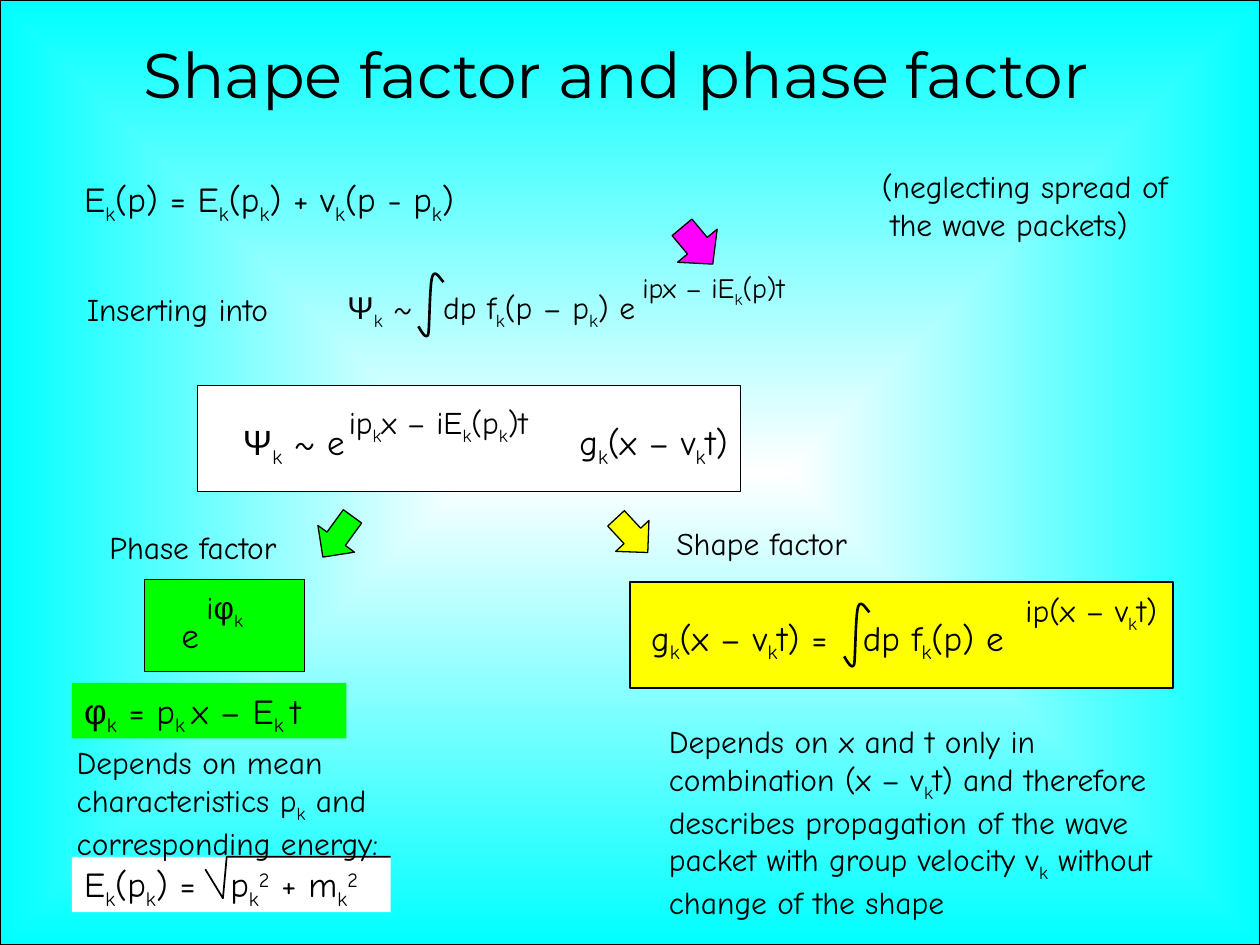
from itertools import groupby
from lxml import etree
from pptx import Presentation, util as u
from pptx.dml import color
from pptx.enum import shapes, text
from pptx.oxml import ns

deck = Presentation()
deck.slide_width, deck.slide_height = u.Inches(10), u.Inches(7.5)
column, row = deck.slide_width / 100, deck.slide_height / 75
page = deck.slides.add_slide(deck.slide_layouts[6])
RECT = shapes.MSO_SHAPE.RECTANGLE
RIGHT, DOWN = shapes.MSO_SHAPE.RIGHT_ARROW, shapes.MSO_SHAPE.DOWN_ARROW
BLACK, WHITE, CYAN = "000000", "FFFFFF", "00FFFF"
GREEN, YELLOW, MAGENTA = "00FF00", "FFFF00", "FF00FF"


def paint(fill, shade):
    fill.solid()
    fill.fore_color.rgb = color.RGBColor.from_string(shade)


def cell(left, top, width, height):
    return [round(left * column), round(top * row), round(width * column), round(height * row)]


backdrop = page.shapes.add_shape(RECT, *cell(0, 0, 100, 75))
backdrop.shadow.inherit = False
paint(backdrop.line.fill, BLACK)
backdrop.line.width = u.Pt(0.75)
backdrop.fill.gradient()
for stop, shade, position in zip(backdrop.fill.gradient_stops, (WHITE, CYAN), (0, 1)):
    stop.color.rgb = color.RGBColor.from_string(shade)
    stop.position = position
linear = backdrop._element.spPr.find(ns.qn("a:gradFill")).find(ns.qn("a:lin"))
radial = etree.Element(ns.qn("a:path"), {"path": "shape"})
etree.SubElement(radial, ns.qn("a:fillToRect"), {side: "50000" for side in "ltrb"})
linear.getparent().replace(linear, radial)

panels = [
    (RECT, (11.5, 46, 12.7, 7.3), GREEN, 0),
    (RECT, (50, 46.2, 43.1, 8.4), YELLOW, 0),
    (RECT, (15.7, 30.6, 43.1, 8.4), WHITE, 0),
    (RIGHT, (48.3, 40.7, 3.7, 3.6), YELLOW, 47.1),
    (DOWN, (25, 40.6, 3.6, 4), GREEN, 36.1),
    (DOWN, (53.3, 17.6, 4.1, 3.8), MAGENTA, 320.1),
]
for kind, area, shade, angle in panels:
    panel = page.shapes.add_shape(kind, *cell(*area))
    panel.shadow.inherit = False
    panel.rotation = angle
    paint(panel.fill, shade)
    paint(panel.line.fill, BLACK)
    panel.line.width = u.Pt(0.75)

# Pieces between bars alternate between the baseline and subscripts; ^ marks a superscript.
texts = [
    ((4.5, 2.3, 88.8, 10.6), 36, None, 0, ["Shape factor and phase factor"]),
    ((5.9, 22.5, 20.1, 4), 18, None, 0, ["Inserting into"]),
    ((18.3, 32.9, 43.1, 4.4), 20, None, 26.7, ["Ψ|k| ~ e\tg|k|(x – v|k|t)"]),
    ((5.7, 68, 25.3, 4.4), 20, WHITE, 11.6, ["E|k|(p|k|) =\tp|k||^2| + m|k||^2"]),
    ((5.1, 58.5, 31.3, 10.1), 18, None, 0,
     ["Depends on mean characteristics p|k| and corresponding energy:"]),
    ((5.7, 13.6, 34.1, 4.4), 20, None, 0, ["E|k|(p) = E|k|(p|k|) + v|k|(p - p|k|)"]),
    ((69, 12.8, 27.4, 7.1), 18, None, 0.7, ["(neglecting spread of", "\tthe wave packets)"]),
    ((26.6, 22.4, 27.3, 4), 18, None, 7.6, ["Ψ|k| ~\tdp f|k|(p – p|k|) e"]),
    ((50, 21, 14.9, 3.7), 16, None, 0, ["ipx – iE|k|(p)t"]),
    ((26.7, 31.5, 18.1, 4), 18, None, 0, ["ip|k|x – iE|k|(p|k|)t"]),
    ((50.7, 48.4, 35.5, 4.4), 20, None, 16.8, ["g|k|(x – v|k|t) =\tdp f|k|(p) e"]),
    ((80.4, 46.4, 14.1, 4), 18, None, 0, ["ip(x – v|k|t)"]),
    ((52.7, 41.1, 20, 4), 18, None, 0, ["Shape factor"]),
    ((7.7, 41.4, 18.1, 4), 18, None, 0, ["Phase factor"]),
    ((15.4, 46.2, 4.9, 4), 18, None, 0, ["iφ|k"]),
    ((13.4, 48.2, 4.8, 4.4), 20, None, 0, ["e"]),
    ((5.7, 54.2, 21.8, 4.4), 20, GREEN, 0, ["φ|k| = p|k |x – E|k |t"]),
    ((52.1, 56.8, 44.3, 16.2), 18, None, 0,
     ["Depends on x and t only in combination (x – v|k|t) and therefore",
      "describes propagation of the wave packet with group velocity v|k| without change of the shape"]),
]
for area, size, shade, tab, lines in texts:
    title = size == 36
    if shade:
        box = page.shapes.add_shape(RECT, *cell(*area))
        box.shadow.inherit = False
        box.line.fill.background()
        paint(box.fill, shade)
    else:
        box = page.shapes.add_textbox(*cell(*area))
    frame_format = {
        "word_wrap": not title,
        "vertical_anchor": text.MSO_ANCHOR.TOP,
        "auto_size": text.MSO_AUTO_SIZE.NONE if title else text.MSO_AUTO_SIZE.SHAPE_TO_FIT_TEXT,
    }
    for name, value in frame_format.items():
        setattr(box.text_frame, name, value)
    for number, line in enumerate(lines):
        para = box.text_frame.add_paragraph() if number else box.text_frame.paragraphs[0]
        para.alignment = text.PP_ALIGN.CENTER if title else text.PP_ALIGN.LEFT
        if "\t" in line:
            stops = etree.SubElement(para._p.get_or_add_pPr(), ns.qn("a:tabLst"))
            etree.SubElement(stops, ns.qn("a:tab"), {"pos": str(round(tab * column)), "algn": "l"})
        for index, piece in enumerate(line.split("|")):
            raised = piece.startswith("^")
            for greek, letters in groupby(piece.lstrip("^"), key=lambda letter: letter in "Ψφ"):
                span = para.add_run()
                span.text = "".join(letters)
                face = "Montserrat" if title else "Arial" if greek else "Comic Neue"
                for name, value in {"size": u.Pt(size), "name": face}.items():
                    setattr(span.font, name, value)
                paint(span.font.fill, BLACK)
                if raised or index % 2:
                    span._r.get_or_add_rPr().set("baseline", "30000" if raised else "-25000")

hook = [(2, 1), (1.6, 0.5), (1.3, 0), (1.1, 0.6), (0.9, 1.3), (0.9, 4.4), (0.8, 5.1),
        (0.6, 5.7), (0.1, 4.6), (0, 4.5)]
integral = hook[:1]
for first in range(0, 9, 3):
    for step in range(1, 13):
        t = step / 12
        weights = ((1 - t) ** 3, 3 * t * (1 - t) ** 2, 3 * t * t * (1 - t), t ** 3)
        integral.append([sum(w * point[axis] for w, point in zip(weights, hook[first:first + 4]))
                         for axis in (0, 1)])
root = [(0, 1), (1.4, 3.3), (1.7, 0), (14.7, 0)]

for left, top, outline, width in [(67, 47.6, integral, 1.5), (33.2, 21.4, integral, 1.5),
                                  (16.3, 68, root, 1)]:
    points = [(round((left + x) * column), round((top + y) * row)) for x, y in outline]
    builder = page.shapes.build_freeform(*points[0])
    builder.add_line_segments(points[1:], close=False)
    stroke = builder.convert_to_shape()
    stroke.shadow.inherit = False
    stroke.fill.background()
    paint(stroke.line.fill, BLACK)
    stroke.line.width = u.Pt(width)

deck.save("out.pptx")
